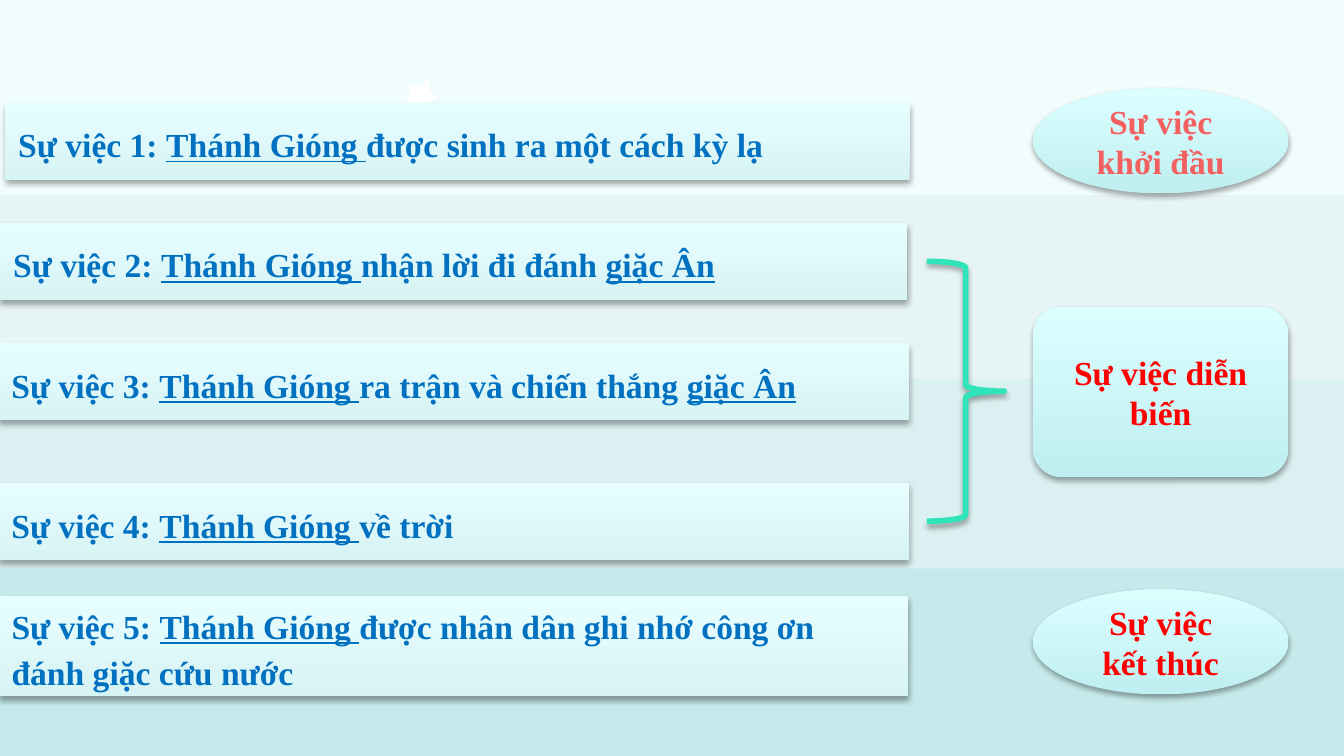
from dataclasses import dataclass

from lxml import etree
from pptx import Presentation
from pptx.dml.color import RGBColor
from pptx.enum.shapes import MSO_SHAPE
from pptx.enum.text import MSO_ANCHOR, PP_ALIGN
from pptx.oxml.ns import qn
from pptx.shapes.autoshape import Shape
from pptx.slide import Slide
from pptx.util import Pt

RECTANGLE = MSO_SHAPE.RECTANGLE
ELLIPSE = MSO_SHAPE.OVAL
ROUNDED = MSO_SHAPE.ROUNDED_RECTANGLE
BRACE = MSO_SHAPE.RIGHT_BRACE
MIDDLE = MSO_ANCHOR.MIDDLE
LEFT, CENTER = PP_ALIGN.LEFT, PP_ALIGN.CENTER


@dataclass(frozen=True)
class Theme:
    font: str = "Times New Roman"
    text_size: float = 18
    brace_width: float = 3
    background: str = "E7F4F5"
    star: str = "FFFFFF"
    event_text: str = "0070C0"
    stage_text: str = "FF0000"
    first_stage_text: str = "F46060"
    brace: str = "2FE4B8"
    event_fill: tuple[str, str] = ("D8F3F4", "E7FEFF")  # bottom, top
    stage_fill: tuple[str, str] = ("C0EFF1", "DBFEFF")


@dataclass(frozen=True)
class Box:
    left: float
    top: float
    width: float
    height: float


@dataclass(frozen=True)
class Band:
    top: float
    height: float
    color: str


@dataclass(frozen=True)
class Run:
    text: str
    underline: bool = False


@dataclass(frozen=True)
class Event:
    box: Box
    runs: tuple[Run, ...]


@dataclass(frozen=True)
class Stage:
    kind: MSO_SHAPE
    top: float
    height: float
    text: str
    color: str


THEME = Theme()
HERO = Run("Thánh Gióng ", True)
ENEMY = Run("giặc Ân", True)

BANDS = (
    Band(203, 103.7, "DBF0F1"),
    Band(304.6, 103.7, "C6EAEB"),
    Band(-2.2, 106.6, "F1FCFC"),
)
STAR_POINTS = (
    (229.7, 42.5), (229.7, 49), (235.4, 52.6), (229, 54.7), (227.5, 61.2),
    (223.2, 56.2), (216.7, 56.2), (220.3, 51.1), (218.2, 44.6), (224.6, 46.8),
)
EVENTS = (
    Event(Box(2.7, 55.1, 484.6, 41.2), (HERO, Run("được sinh ra một cách kỳ lạ"))),
    Event(Box(0, 119.5, 486.2, 41.2), (HERO, Run("nhận lời đi đánh "), ENEMY)),
    Event(Box(-0.9, 184, 488, 41.2), (HERO, Run("ra trận và chiến thắng "), ENEMY)),
    Event(Box(-0.9, 258.8, 488, 41.2), (HERO, Run("về trời"))),
    Event(Box(-0.9, 319.4, 487.3, 53.6),
          (HERO, Run("được nhân dân ghi nhớ công ơn đánh giặc cứu nước"))),
)
STAGE_LEFT, STAGE_WIDTH = 553.4, 136.8
STAGES = (
    Stage(ELLIPSE, 47.4, 56.2, "Sự việc khởi đầu", THEME.first_stage_text),
    Stage(ROUNDED, 164.3, 91.3, "Sự việc diễn biến", THEME.stage_text),
    Stage(ELLIPSE, 315.8, 56.2, "Sự việc kết thúc", THEME.stage_text),
)
BRACE_BOX = Box(496.6, 140, 41.4, 139.2)


def rgb(color: str) -> RGBColor:
    return RGBColor.from_string(color)


def add_box(slide: Slide, kind: MSO_SHAPE, box: Box) -> Shape:
    shape = slide.shapes.add_shape(
        kind, Pt(box.left), Pt(box.top), Pt(box.width), Pt(box.height))
    shape.shadow.inherit = False
    shape.line.fill.background()
    return shape


def fill_solid(shape: Shape, color: str) -> None:
    shape.fill.solid()
    shape.fill.fore_color.rgb = rgb(color)


def fill_gradient(shape: Shape, colors: tuple[str, str]) -> None:
    shape.fill.gradient()
    shape.fill.gradient_angle = 90
    for stop, color in zip(shape.fill.gradient_stops, colors):
        stop.color.rgb = rgb(color)


def add_shadow(shape: Shape) -> None:
    effects = shape._element.spPr.find(qn("a:effectLst"))
    shadow = etree.SubElement(
        effects, qn("a:outerShdw"), blurRad=str(Pt(3.1)), dist=str(Pt(1.8)),
        dir="5400000", rotWithShape="0")
    color = etree.SubElement(shadow, qn("a:srgbClr"), val="000000")
    etree.SubElement(color, qn("a:alpha"), val="35000")


def write_text(shape: Shape, runs: tuple[Run, ...], color: str,
               alignment: PP_ALIGN, line_spacing: float) -> None:
    frame = shape.text_frame
    frame.word_wrap = True
    frame.vertical_anchor = MIDDLE
    paragraph = frame.paragraphs[0]
    paragraph.alignment = alignment
    paragraph.line_spacing = line_spacing
    paragraph.font.name = THEME.font
    paragraph.font.size = Pt(THEME.text_size)
    paragraph.font.bold = True
    paragraph.font.color.rgb = rgb(color)
    for part in runs:
        run = paragraph.add_run()
        run.text = part.text
        # Runs do not take every paragraph default over the shape style
        run.font.name = THEME.font
        run.font.size = Pt(THEME.text_size)
        run.font.bold = True
        run.font.color.rgb = rgb(color)
        if part.underline:
            run.font.underline = True


def add_star(slide: Slide) -> None:
    start, *rest = STAR_POINTS
    builder = slide.shapes.build_freeform(*start, scale=Pt(1))
    builder.add_line_segments(rest, close=True)
    star = builder.convert_to_shape()
    star.shadow.inherit = False
    fill_solid(star, THEME.star)
    star.line.fill.background()


def add_event(slide: Slide, number: int, event: Event) -> None:
    bar = add_box(slide, RECTANGLE, event.box)
    fill_gradient(bar, THEME.event_fill)
    add_shadow(bar)
    label = Run(f"Sự việc {number}: ")
    write_text(bar, (label, *event.runs), THEME.event_text, LEFT, 1.15)


def add_stage(slide: Slide, stage: Stage) -> None:
    shape = add_box(slide, stage.kind,
                    Box(STAGE_LEFT, stage.top, STAGE_WIDTH, stage.height))
    fill_gradient(shape, THEME.stage_fill)
    add_shadow(shape)
    write_text(shape, (Run(stage.text),), stage.color, CENTER, 1.0)


def add_brace(slide: Slide) -> None:
    brace = add_box(slide, BRACE, BRACE_BOX)
    brace.fill.background()
    brace.line.color.rgb = rgb(THEME.brace)
    brace.line.width = Pt(THEME.brace_width)
    add_shadow(brace)


def main() -> None:
    presentation = Presentation()
    presentation.slide_width, presentation.slide_height = Pt(720), Pt(405)
    slide = presentation.slides.add_slide(presentation.slide_layouts[6])

    # Background bands and star
    slide.background.fill.solid()
    slide.background.fill.fore_color.rgb = rgb(THEME.background)
    for band in BANDS:
        fill_solid(add_box(slide, RECTANGLE, Box(-0.7, band.top, 725, band.height)),
                   band.color)
    add_star(slide)

    # Story events on the left, their stages on the right
    for number, event in enumerate(EVENTS, start=1):
        add_event(slide, number, event)
    add_brace(slide)
    for stage in STAGES:
        add_stage(slide, stage)

    presentation.save("out.pptx")


if __name__ == "__main__":
    main()
